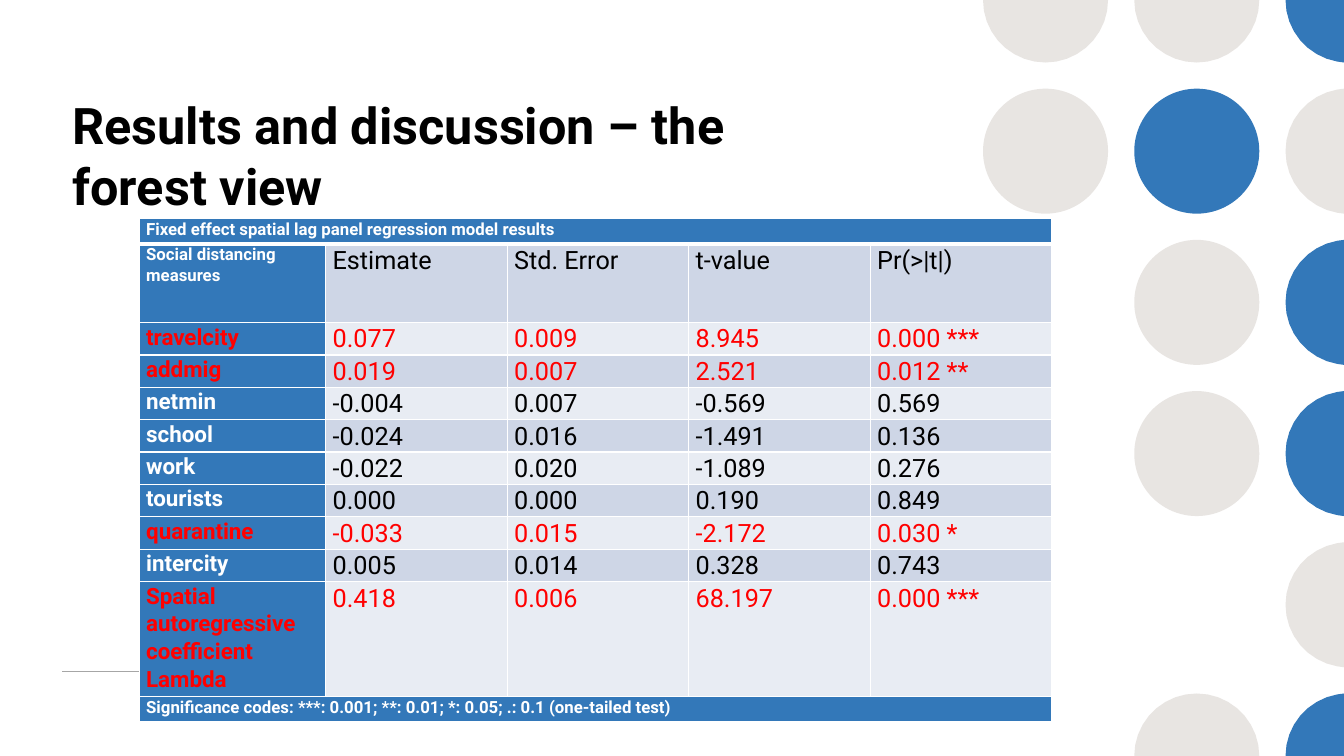
import math

from lxml import etree
from pptx import Presentation
from pptx.dml.color import RGBColor
from pptx.enum.shapes import MSO_CONNECTOR, MSO_SHAPE
from pptx.enum.text import MSO_ANCHOR
from pptx.oxml.ns import qn
from pptx.util import Inches, Pt

STRAIGHT = MSO_CONNECTOR.STRAIGHT
ELLIPSE = MSO_SHAPE.OVAL
MIDDLE = MSO_ANCHOR.MIDDLE

SLIDE_WIDTH, SLIDE_HEIGHT = 13.33, 7.5
FONT = "Roboto"
BLUE, SAND, GREY = "3378B9", "E8E5E2", "A6A6A6"
BLACK, WHITE, RED = "000000", "FFFFFF", "FF0000"
BAND_DARK, BAND_LIGHT = "CED6E6", "E8ECF3"
ARC_STEP = 10

CIRCLE_ROWS = [
    (SAND, SAND, BLUE),
    (SAND, BLUE, SAND),
    (None, SAND, BLUE),
    (None, SAND, BLUE),
    (None, None, SAND),
    (None, SAND, BLUE),
]

CAPTION = "Fixed effect spatial lag panel regression model results"
FOOTNOTE = "Significance codes: ***: 0.001; **: 0.01; *: 0.05; .: 0.1 (one-tailed test)"
HEADER = ("Social distancing measures", "Estimate", "Std. Error", "t-value", "Pr(>|t|)")
RESULTS = [
    ("travelcity", "0.077", "0.009", "8.945", "0.000 ***"),
    ("addmig", "0.019", "0.007", "2.521", "0.012 **"),
    ("netmin", "-0.004", "0.007", "-0.569", "0.569"),
    ("school", "-0.024", "0.016", "-1.491", "0.136"),
    ("work", "-0.022", "0.020", "-1.089", "0.276"),
    ("tourists", "0.000", "0.000", "0.190", "0.849"),
    ("quarantine", "-0.033", "0.015", "-2.172", "0.030 *"),
    ("intercity", "0.005", "0.014", "0.328", "0.743"),
    ("Spatial autoregressive coefficient Lambda", "0.418", "0.006", "68.197", "0.000 ***"),
]
COLUMN_WIDTHS = [1.85] + [1.8] * 4
ROW_HEIGHTS = [0.25, 0.78] + [0.31] * 8 + [1.04, 0.25]


def color(hex_string):
    return RGBColor.from_string(hex_string)


def set_fill(target, hex_string):
    target.fill.solid()
    target.fill.fore_color.rgb = color(hex_string)


def write_text(frame, text, size, hex_string, bold):
    para = frame.paragraphs[0]
    span = para.add_run()
    span.text = text
    for name, value in {"name": FONT, "size": Pt(size), "bold": bold}.items():
        setattr(span.font, name, value)
    span.font.color.rgb = color(hex_string)
    return para


def add_cut_circle(page, left, top, diameter):
    """Outline the half or quarter circle that stays inside the slide edges."""
    over_top = top < 0
    over_bottom = top + diameter > SLIDE_HEIGHT
    over_right = left + diameter > SLIDE_WIDTH
    start = max(90 if over_right else 0, 180 if over_bottom else 0)
    end = min(270 if over_right else 360, 180 if over_top else 360)
    radius = diameter / 2
    points = []
    for degrees in range(start, end + 1, ARC_STEP):
        angle = math.radians(degrees)
        x = left + radius + radius * math.cos(angle)
        y = top + radius + radius * math.sin(angle)
        points.append((min(x, SLIDE_WIDTH), min(max(y, 0), SLIDE_HEIGHT)))
    if over_right and (over_top or over_bottom):
        points.append((SLIDE_WIDTH, 0 if over_top else SLIDE_HEIGHT))
    corners = [(Inches(x), Inches(y)) for x, y in points]
    builder = page.shapes.build_freeform(*corners[0])
    builder.add_line_segments(corners[1:], close=True)
    return builder.convert_to_shape()


def add_circle_grid(page, left, top, pitch, diameter):
    for row, colors in enumerate(CIRCLE_ROWS):
        for column, hex_string in enumerate(colors):
            if not hex_string:
                continue
            x, y = left + column * pitch, top + row * pitch
            if y >= 0 and x + diameter <= SLIDE_WIDTH and y + diameter <= SLIDE_HEIGHT:
                circle = page.shapes.add_shape(
                    ELLIPSE, Inches(x), Inches(y), Inches(diameter), Inches(diameter))
            else:
                circle = add_cut_circle(page, x, y, diameter)
            circle.shadow.inherit = False
            set_fill(circle, hex_string)
            circle.line.fill.background()


def add_rule(page, left, top, width):
    rule = page.shapes.add_connector(
        STRAIGHT, Inches(left), Inches(top), Inches(left + width), Inches(top))
    rule.line.color.rgb = color(GREY)
    rule.line.width = Pt(1)
    etree.SubElement(rule._element.spPr, qn("a:effectLst"))


def add_title(page, left, top, width, height):
    box = page.shapes.add_textbox(Inches(left), Inches(top), Inches(width), Inches(height))
    frame = box.text_frame
    frame.word_wrap = True
    frame.vertical_anchor = MIDDLE
    write_text(frame, "Results and discussion – the forest view", 36, BLACK, True)


def set_borders(cell, widths):
    properties = cell._tc.get_or_add_tcPr()
    for tag, width in widths.items():
        border = etree.SubElement(properties, qn(f"a:{tag}"), w=str(Pt(width)))
        fill = etree.SubElement(border, qn("a:solidFill"))
        etree.SubElement(fill, qn("a:srgbClr"), val=WHITE)


def cell_format(row, column, last_row):
    """Return size, text colour, bold and fill for a table cell."""
    if row in (0, last_row):
        return 12, WHITE, True, BLUE
    significant = row > 1 and "*" in RESULTS[row - 2][-1]
    if column == 0:
        return 12 if row == 1 else 16, RED if significant else WHITE, True, BLUE
    return 18, RED if significant else BLACK, False, BAND_DARK if row % 2 else BAND_LIGHT


def add_results_table(page, left, top):
    rows = [(CAPTION, "", "", "", ""), HEADER, *RESULTS, (FOOTNOTE, "", "", "", "")]
    last_row = len(rows) - 1
    frame = page.shapes.add_table(
        len(rows), len(HEADER), Inches(left), Inches(top),
        Inches(sum(COLUMN_WIDTHS)), Inches(sum(ROW_HEIGHTS)))
    table = frame.table
    for column, width in zip(table.columns, COLUMN_WIDTHS):
        column.width = Inches(width)
    for row, height in zip(table.rows, ROW_HEIGHTS):
        row.height = Inches(height)
    margins = {"margin_left": 0.07, "margin_right": 0.07, "margin_top": 0, "margin_bottom": 0}
    for row, texts in enumerate(rows):
        for column, text in enumerate(texts):
            cell = table.cell(row, column)
            size, text_color, bold, fill = cell_format(row, column, last_row)
            for name, value in margins.items():
                setattr(cell, name, Inches(value))
            set_borders(cell, {"lnL": 1, "lnR": 1, "lnT": 3 if row == 1 else 1,
                               "lnB": 3 if row == 0 else 1})
            set_fill(cell, fill)
            if text:
                para = write_text(cell.text_frame, text, size, text_color, bold)
                para.line_spacing = 1.07
                para.space_after = Pt(8)
    for row in (0, last_row):
        table.cell(row, 0).merge(table.cell(row, len(HEADER) - 1))


def main():
    deck = Presentation()
    deck.slide_width = Inches(SLIDE_WIDTH)
    deck.slide_height = Inches(SLIDE_HEIGHT)
    page = deck.slides.add_slide(deck.slide_layouts[6])
    add_circle_grid(page, left=9.75, top=-0.62, pitch=1.5, diameter=1.24)
    add_rule(page, left=0.62, top=6.66, width=8.02)
    add_title(page, left=0.62, top=0.84, width=8.02, height=1.39)
    add_results_table(page, left=1.38, top=2.17)
    deck.save("out.pptx")


if __name__ == "__main__":
    main()
